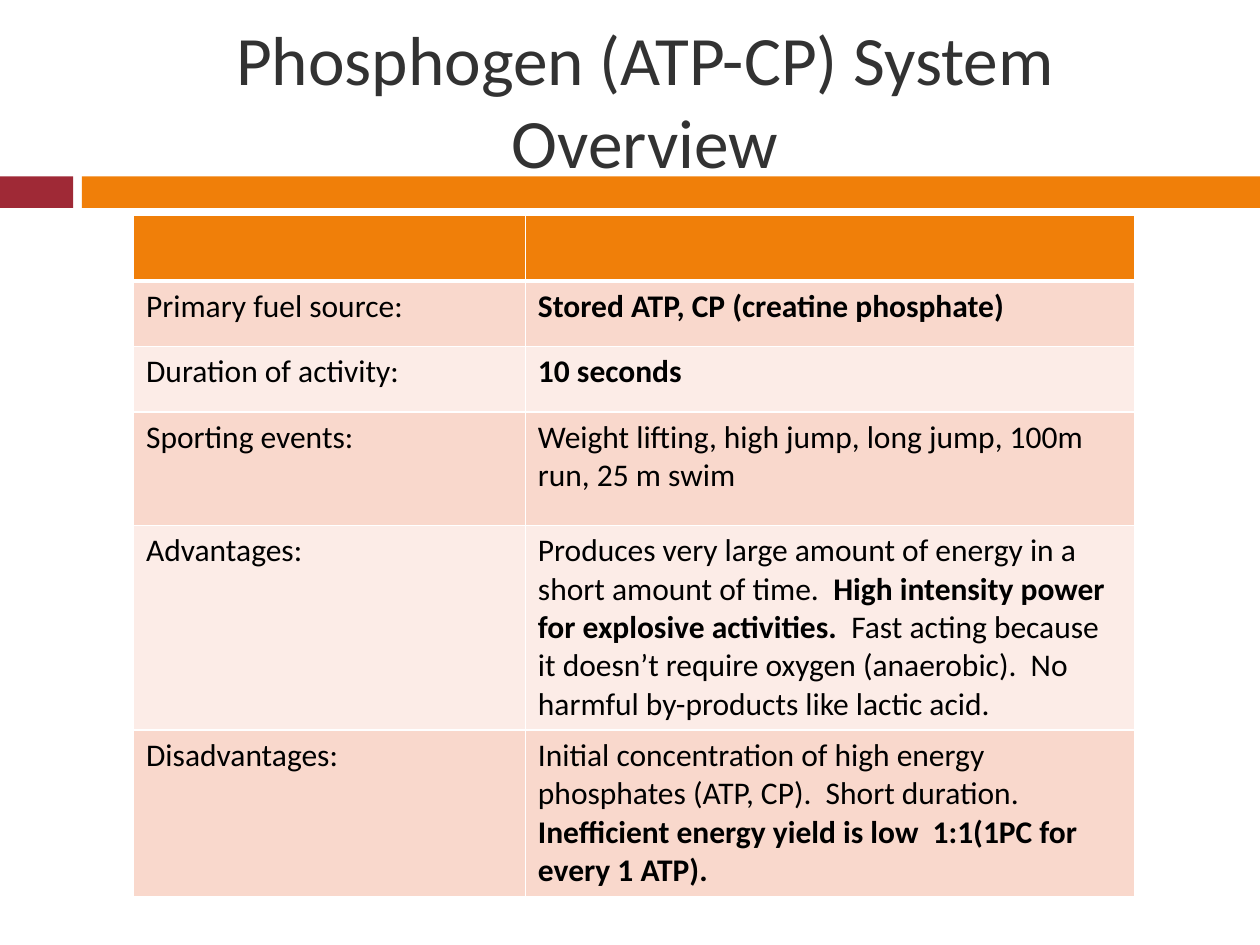
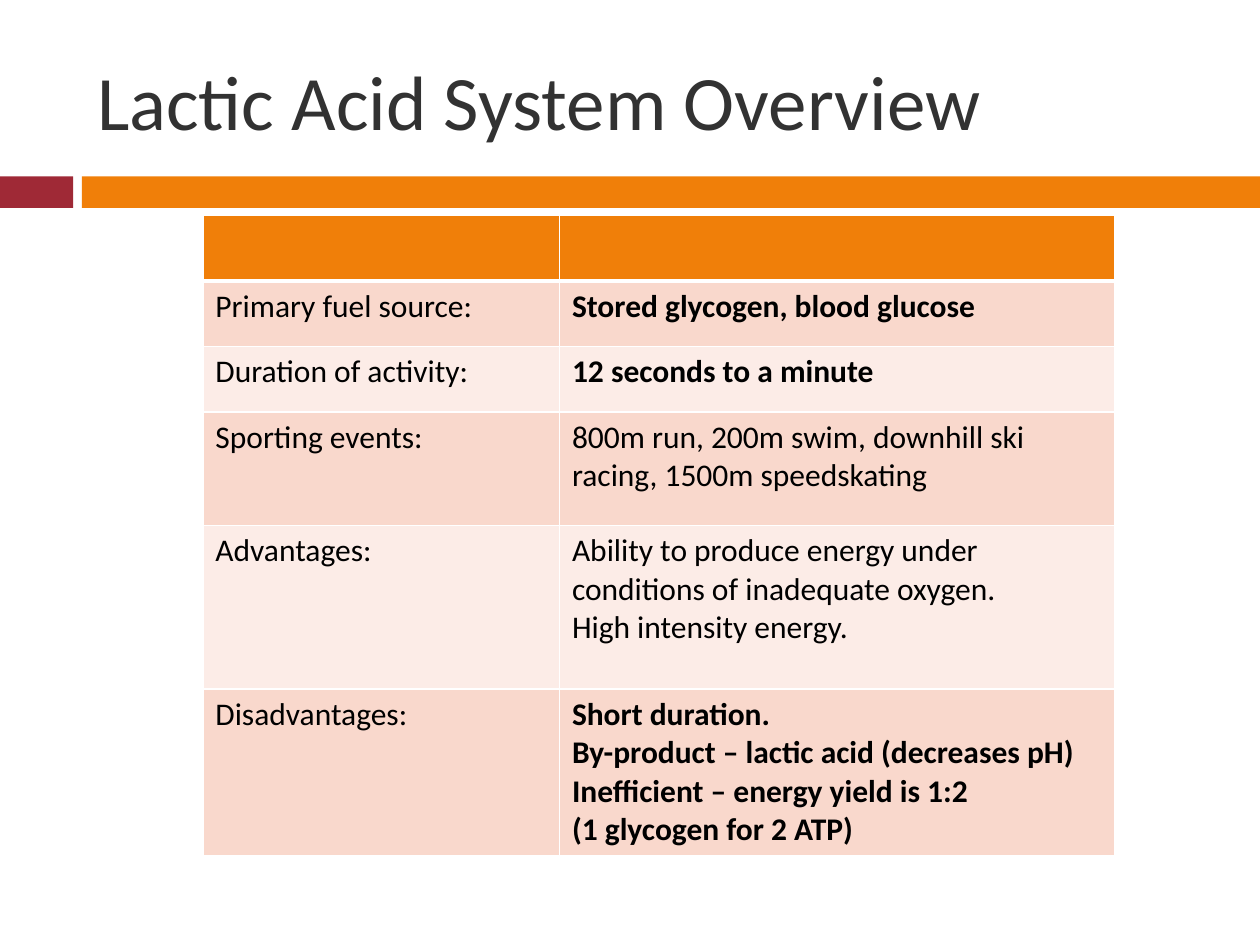
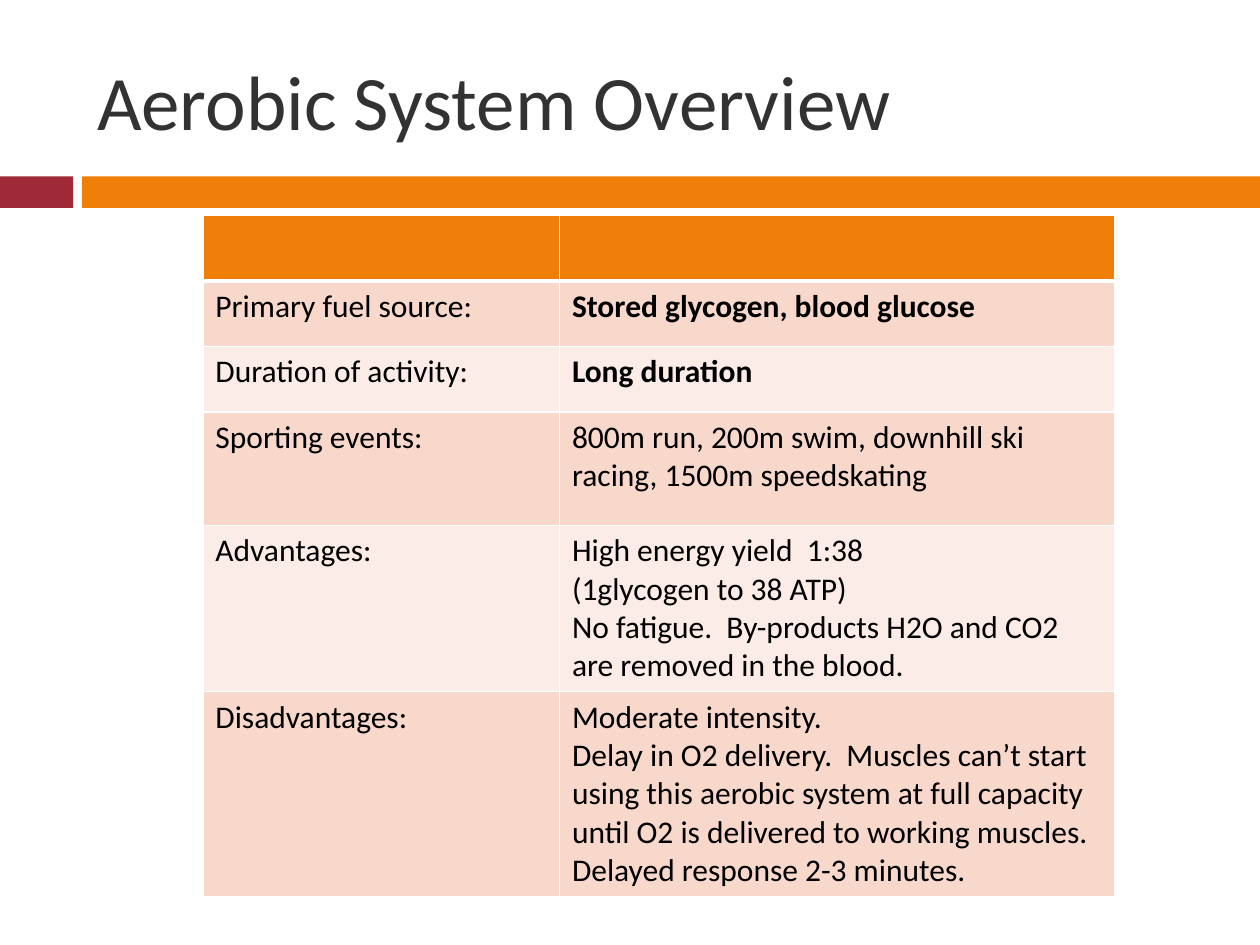
"""Builds three overview slides on the energy systems of the body."""
import pptx
import pptx.util
import pptx.dml.color
import pptx.enum.shapes
import pptx.enum.text
import pptx.oxml
import pptx.oxml.ns

Inches = pptx.util.Inches
Pt = pptx.util.Pt
RGBColor = pptx.dml.color.RGBColor
Align = pptx.enum.text.PP_ALIGN

WHITE = RGBColor(0xFF, 0xFF, 0xFF)
BLACK = RGBColor(0x00, 0x00, 0x00)
GRAY = RGBColor(0x32, 0x32, 0x32)
RED = RGBColor(0x9F, 0x29, 0x36)
ORANGE = RGBColor(0xF0, 0x7F, 0x09)
ROSE = RGBColor(0xF9, 0xD8, 0xCC)
BLUSH = RGBColor(0xFC, 0xEC, 0xE7)

LABELS = ["Primary fuel source:", "Duration of activity:", "Sporting events:",
          "Advantages:", "Disadvantages:"]
TOP_ROWS = [0.52, 0.52, 0.52, 0.9]
EVENTS = "800m run, 200m swim, downhill ski racing, 1500m speedskating"
FUEL = "*Stored glycogen, blood glucose*"

SYSTEMS = [
    dict(title="Phosphogen (ATP-CP) System Overview", size=39.6, align=Align.CENTER,
         left=1.06, cols=[3.11, 4.84], ends=[1.6, 1],
         facts=["*Stored ATP, CP (creatine phosphate)*",
                "*10 seconds*",
                "Weight lifting, high jump, long jump, 100m run, 25 m swim",
                "Produces very large amount of energy in a short amount of time.  "
                "*High intensity power for explosive activities.*  Fast acting because "
                "it doesn’t require oxygen (anaerobic).  No harmful by-products like "
                "lactic acid.",
                "Initial concentration of high energy phosphates (ATP, CP).  Short "
                "duration.  *Inefficient energy yield is low  1:1(1PC for every 1 ATP).*"]),
    dict(title="Lactic Acid System Overview", ends=[1.3, 1.3],
         facts=[FUEL,
                "*12 seconds to a minute*",
                EVENTS,
                "Ability to produce energy under conditions of inadequate oxygen.\n"
                "High intensity energy.",
                "*Short duration.*\n*By-product – lactic acid (decreases pH)*\n"
                "*Inefficient – energy yield is 1:2*\n*(1 glycogen for 2 ATP)*"]),
    dict(title="Aerobic System Overview", ends=[1.3, 1.6],
         facts=[FUEL,
                "*Long duration*",
                EVENTS,
                "High energy yield  1:38\n(1glycogen to 38 ATP)\n"
                "No fatigue.  By-products H2O and CO2 are removed in the blood.",
                "Moderate intensity.\nDelay in O2 delivery.  Muscles can’t start using "
                "this aerobic system at full capacity until O2 is delivered to working "
                "muscles.  Delayed response 2-3 minutes."]),
]


class Deck:
    """Holds the shared style and the current slide."""

    font = "Calibri"

    def __init__(self):
        self.show = pptx.Presentation()
        self.show.slide_width = Inches(10)
        self.show.slide_height = Inches(7.5)

    def start(self):
        self.slide = self.show.slides.add_slide(self.show.slide_layouts[5])
        self.band(0, 0.58, RED)
        self.band(0.65, 9.35, ORANGE)

    def band(self, left, width, color):
        shape = self.slide.shapes.add_shape(
            pptx.enum.shapes.MSO_SHAPE.RECTANGLE,
            Inches(left), Inches(1.4), Inches(width), Inches(0.25))
        shape.shadow.inherit = False
        shape.fill.solid()
        shape.fill.fore_color.rgb = color
        shape.line.fill.background()

    def style(self, run, size, color, bold=False):
        run.font.name = self.font
        run.font.size = Pt(size)
        run.font.color.rgb = color
        run.font.bold = bold

    def title(self, text, size, align):
        box = self.slide.shapes.title
        box.left, box.top = Inches(0.67), Inches(0.25)
        box.width, box.height = Inches(8.9), Inches(1.08)
        frame = box.text_frame
        frame.text = text
        frame.word_wrap = True
        frame.auto_size = pptx.enum.text.MSO_AUTO_SIZE.NONE
        frame.vertical_anchor = pptx.enum.text.MSO_ANCHOR.MIDDLE
        frame.paragraphs[0].alignment = align
        self.style(frame.paragraphs[0].runs[0], size, GRAY)

    def edges(self, cell, top, bottom):
        props = cell._tc.get_or_add_tcPr()
        for side, width in (("L", 1), ("R", 1), ("T", top), ("B", bottom)):
            props.append(pptx.oxml.parse_xml(
                f'<a:ln{side} {pptx.oxml.ns.nsdecls("a")} w="{Pt(width)}">'
                f'<a:solidFill><a:srgbClr val="{WHITE}"/></a:solidFill></a:ln{side}>'))

    def label(self, cell, text):
        cell.text_frame.text = text.replace("*", "")
        for para, line in zip(cell.text_frame.paragraphs, text.split("\n")):
            para.clear()
            for index, part in enumerate(line.split("*")):
                if part:
                    run = para.add_run()
                    run.text = part
                    self.style(run, 18, BLACK, index % 2 == 1)

    def table(self, left, cols, rows, facts):
        grid = self.slide.shapes.add_table(
            len(rows), len(cols), Inches(left), Inches(1.71),
            Inches(sum(cols)), Inches(sum(rows))).table
        for col, width in zip(grid.columns, cols):
            col.width = Inches(width)
        lines = [("", "")] + list(zip(LABELS, facts))
        for index, (height, line) in enumerate(zip(rows, lines)):
            grid.rows[index].height = Inches(height)
            color = ORANGE if index == 0 else ROSE if index % 2 else BLUSH
            for cell, text in zip(grid.rows[index].cells, line):
                self.edges(cell, 3 if index == 1 else 1, 3 if index == 0 else 1)
                cell.fill.solid()
                cell.fill.fore_color.rgb = color
                if text:
                    self.label(cell, text)

    def build(self, title, facts, ends, size=44, align=Align.LEFT,
              left=1.61, cols=(2.83, 4.41)):
        self.start()
        self.title(title, size, align)
        self.table(left, cols, TOP_ROWS + ends, facts)


def main():
    deck = Deck()
    for system in SYSTEMS:
        deck.build(**system)
    deck.show.save("out.pptx")


if __name__ == "__main__":
    main()
